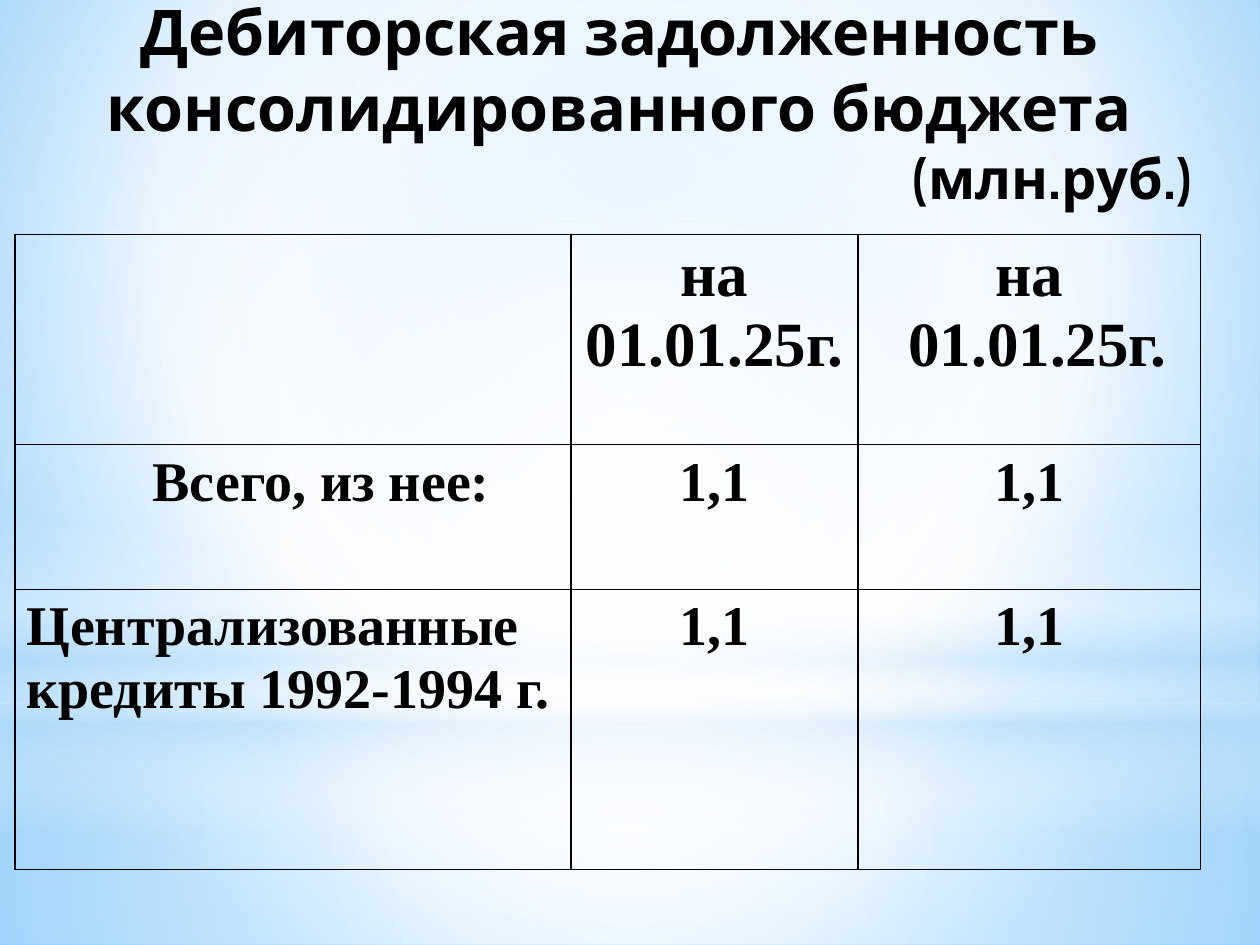
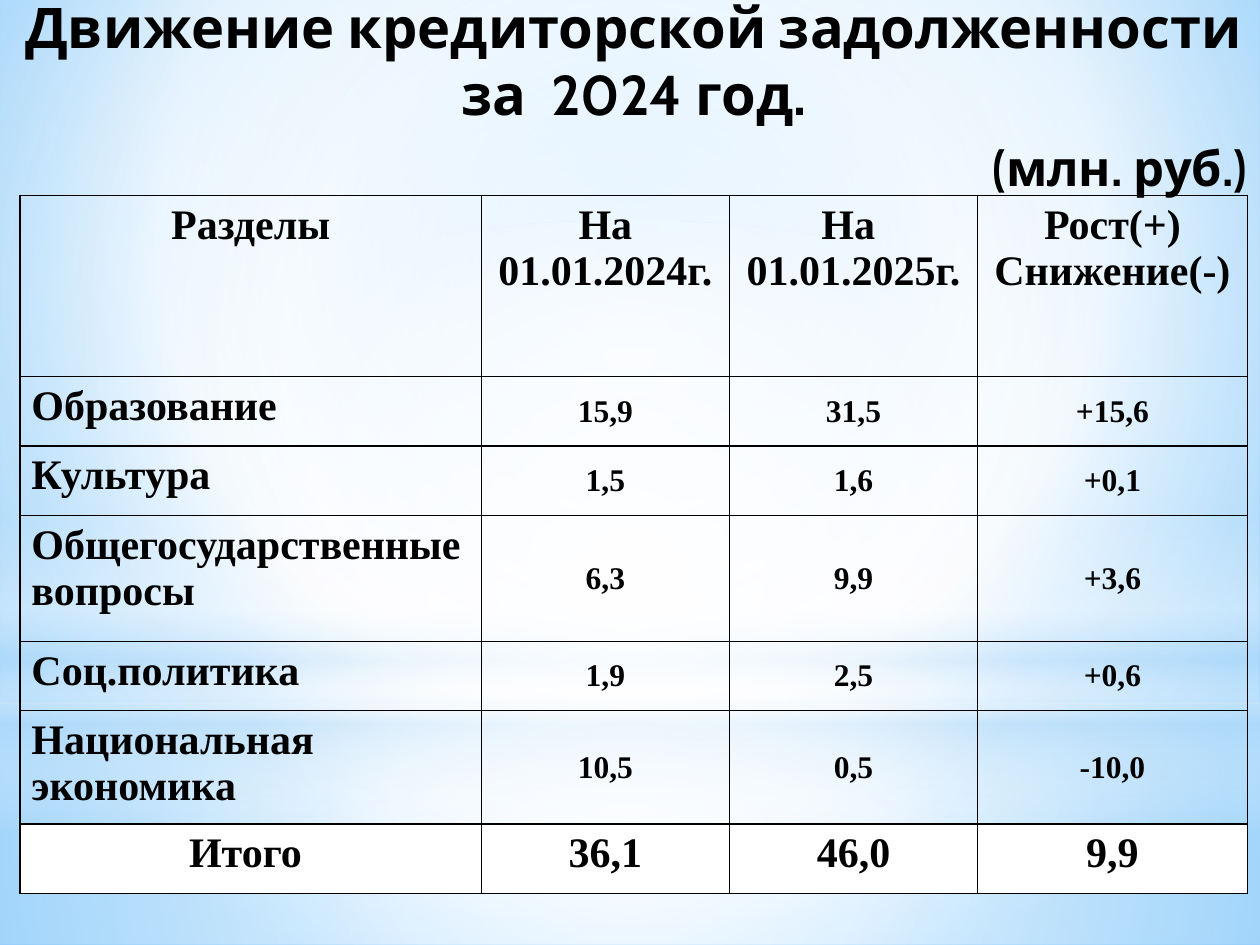
from dataclasses import dataclass

from lxml import etree
from pptx import Presentation
from pptx.dml.color import RGBColor
from pptx.enum import shapes, text
from pptx.oxml.ns import nsdecls, qn
from pptx.util import Inches, Pt


@dataclass(frozen=True)
class Theme:
    title_font: str = "Cabin"
    table_font: str = "Times New Roman"
    ink: str = "000000"
    white: str = "FFFFFF"
    haze: str = "B4DCFA"
    sky: str = "9ED5FF"
    deep_sky: str = "5BB9FF"
    huge: int = 36
    large: int = 32
    medium: int = 28
    body: int = 24
    small: int = 18
    border: int = 1


T = Theme()
CENTER, LEFT, RIGHT = (text.PP_ALIGN.CENTER, text.PP_ALIGN.LEFT,
                       text.PP_ALIGN.RIGHT)
MIDDLE, TOP = text.MSO_ANCHOR.MIDDLE, text.MSO_ANCHOR.TOP


# Gradients
def set_gradient(fill, owner, stops, center=None):
    """Fill with (position, colour, opacity) stops, radial if center is given."""
    fill.gradient()
    marks = "".join(
        f'<a:gs pos="{pos * 1000}"><a:srgbClr val="{color}">'
        f'<a:alpha val="{alpha * 1000}"/></a:srgbClr></a:gs>'
        for pos, color, alpha in stops)
    if center:
        rect = " ".join(f'{side}="{v * 1000}"' for side, v in zip("ltrb", center))
        shade = f'<a:path path="circle"><a:fillToRect {rect}/></a:path>'
    else:
        shade = '<a:lin ang="5400000" scaled="0"/>'
    new = etree.fromstring(
        f'<a:gradFill {nsdecls("a")} rotWithShape="1">'
        f'<a:gsLst>{marks}</a:gsLst>{shade}</a:gradFill>')
    old = owner.find(".//" + qn("a:gradFill"))
    old.getparent().replace(old, new)


# Shared backdrop: sky gradient and four soft glows on the master
def build_backdrop(master, slide):
    set_gradient(master.background.fill, master.element.cSld,
                 [(0, T.sky, 100), (60, T.white, 100), (100, T.deep_sky, 100)],
                 (20, 10, 20, 60))
    rect, oval = shapes.MSO_SHAPE.RECTANGLE, shapes.MSO_SHAPE.OVAL
    middle = (50, 50, 50, 50)
    glows = [
        (rect, 5.58, 1.92, middle,
         [(0, T.white, 91), (37, T.white, 76), (100, T.haze, 79)]),
        (rect, 0, 5.58, middle,
         [(0, T.white, 89), (48, T.white, 62), (100, T.haze, 79)]),
        (rect, 4.12, 2.5, None,
         [(0, T.white, 0), (29, T.white, 30), (45, T.haze, 40),
          (55, T.white, 26), (65, T.haze, 60), (100, T.white, 0)]),
        (oval, 1.75, 5.58, middle, [(0, T.white, 100), (56, T.white, 0)]),
    ]
    tree = master.shapes.element
    for i, (kind, top, height, center, stops) in enumerate(glows):
        sp = slide.shapes.add_shape(kind, 0, Inches(top), Inches(10), Inches(height))
        sp.shadow.inherit = False
        sp.line.fill.background()
        set_gradient(sp.fill, sp.element.spPr, stops, center)
        tree.insert(2 + i, sp.element)


# Text
def add_run(p, words, font, size):
    r = p.add_run()
    r.text = words
    r.font.name, r.font.size, r.font.bold = font, Pt(size), True
    r.font.color.rgb = RGBColor.from_string(T.ink)


def place_title(slide, box, lines, size, unit, unit_size, unit_gap=0):
    sp = slide.shapes.title
    sp.left, sp.top, sp.width, sp.height = map(Inches, box)
    tf = sp.text_frame
    tf.word_wrap = True
    tf.auto_size = text.MSO_AUTO_SIZE.NONE
    tf.vertical_anchor = TOP
    tf.margin_top = Inches(0.05)
    rows = [(line, size, CENTER, 0) for line in lines]
    rows.append((unit, unit_size, RIGHT, unit_gap))
    for i, (line, points, align, gap) in enumerate(rows):
        p = tf.add_paragraph() if i else tf.paragraphs[0]
        p.alignment = align
        p.space_before = Pt(gap)
        add_run(p, line, T.title_font, points)


# Tables
def add_borders(cell):
    tc_pr = cell._tc.get_or_add_tcPr()
    for i, side in enumerate("LRTB"):
        tc_pr.insert(i, etree.fromstring(
            f'<a:ln{side} {nsdecls("a")} w="{Pt(T.border)}"><a:solidFill>'
            f'<a:srgbClr val="{T.ink}"/></a:solidFill></a:ln{side}>'))


def fill_cell(cell, words, size, align=CENTER, anchor=TOP, fill=None):
    cell.margin_left = cell.margin_right = Inches(0.09)
    cell.margin_top = cell.margin_bottom = Inches(0.05)
    cell.vertical_anchor = anchor
    if fill:
        cell.fill.solid()
        cell.fill.fore_color.rgb = RGBColor.from_string(fill)
    else:
        cell.fill.background()
    add_borders(cell)
    tf = cell.text_frame
    for i, line in enumerate(words.split("\n") if words else []):
        p = tf.add_paragraph() if i else tf.paragraphs[0]
        p.alignment = align
        add_run(p, line, T.table_font, size)


def place_table(slide, left, top, widths, heights, rows, cell_style):
    """Fill a grid; cell_style(row, column) gives the options of fill_cell."""
    frame = slide.shapes.add_table(
        len(rows), len(widths), Inches(left), Inches(top),
        Inches(sum(widths)), Inches(sum(heights)))
    table = frame.table
    table.first_row = table.horz_banding = False
    for column, width in zip(table.columns, widths):
        column.width = Inches(width)
    for row, height in zip(table.rows, heights):
        row.height = Inches(height)
    for i, row in enumerate(rows):
        for j, words in enumerate(row):
            fill_cell(table.cell(i, j), words, **cell_style(i, j))
    return table


# Slide 1: receivables
def build_receivables(slide):
    place_title(slide, (0.27, -0.11, 9.29, 2.44),
                ["Дебиторская задолженность консолидированного бюджета"],
                T.huge, "(млн.руб.)", T.large)
    rows = [("", "на 01.01.25г.", "на\n 01.01.25г."),
            ("Всего, из нее:", "1,1", "1,1"),
            ("Централизованные кредиты 1992-1994 г.", "1,1", "1,1")]

    def style(i, j):
        return dict(size=T.large if i else T.huge, align=CENTER if j else LEFT)

    table = place_table(slide, 0.12, 1.86, (4.41, 2.28, 2.72),
                        (1.67, 1.15, 2.22), rows, style)
    table.cell(1, 0).margin_left = Inches(1.09)


# Slide 2: payables
def build_payables(slide):
    place_title(slide, (0.06, -0.11, 9.94, 2.26),
                ["Движение кредиторской задолженности ", "за  2024 год."],
                T.large, "(млн. руб.)", T.medium, unit_gap=6)
    rows = [("Разделы", "На\n01.01.2024г.", "На \n01.01.2025г.",
             "Рост(+)\nСнижение(-)"),
            ("Образование", "15,9", "31,5", "+15,6"),
            ("Культура", "1,5", "1,6", "+0,1"),
            ("Общегосударственные вопросы", "6,3", "9,9", "+3,6"),
            ("Соц.политика", "1,9", "2,5", "+0,6"),
            ("Национальная экономика", "10,5", "0,5", "-10,0"),
            ("Итого ", "36,1", "46,0", "9,9")]
    total = len(rows) - 1

    def style(i, j):
        if i == 0:
            return dict(size=T.body)
        if i == total:
            return dict(size=T.body, fill=T.white)
        if j == 0:
            return dict(size=T.body, align=LEFT)
        return dict(size=T.small, anchor=MIDDLE)

    place_table(slide, 0.16, 1.55, (3.66, 1.97, 1.97, 2.14),
                (1.44, 0.55, 0.55, 1, 0.55, 0.9, 0.55), rows, style)


def main():
    prs = Presentation()
    prs.slide_width, prs.slide_height = Inches(10), Inches(7.5)
    title_only = prs.slide_layouts[5]
    builders = (build_receivables, build_payables)
    slides = [prs.slides.add_slide(title_only) for _ in builders]
    build_backdrop(prs.slide_master, slides[0])
    for build, slide in zip(builders, slides):
        build(slide)
    prs.save("out.pptx")


if __name__ == "__main__":
    main()
